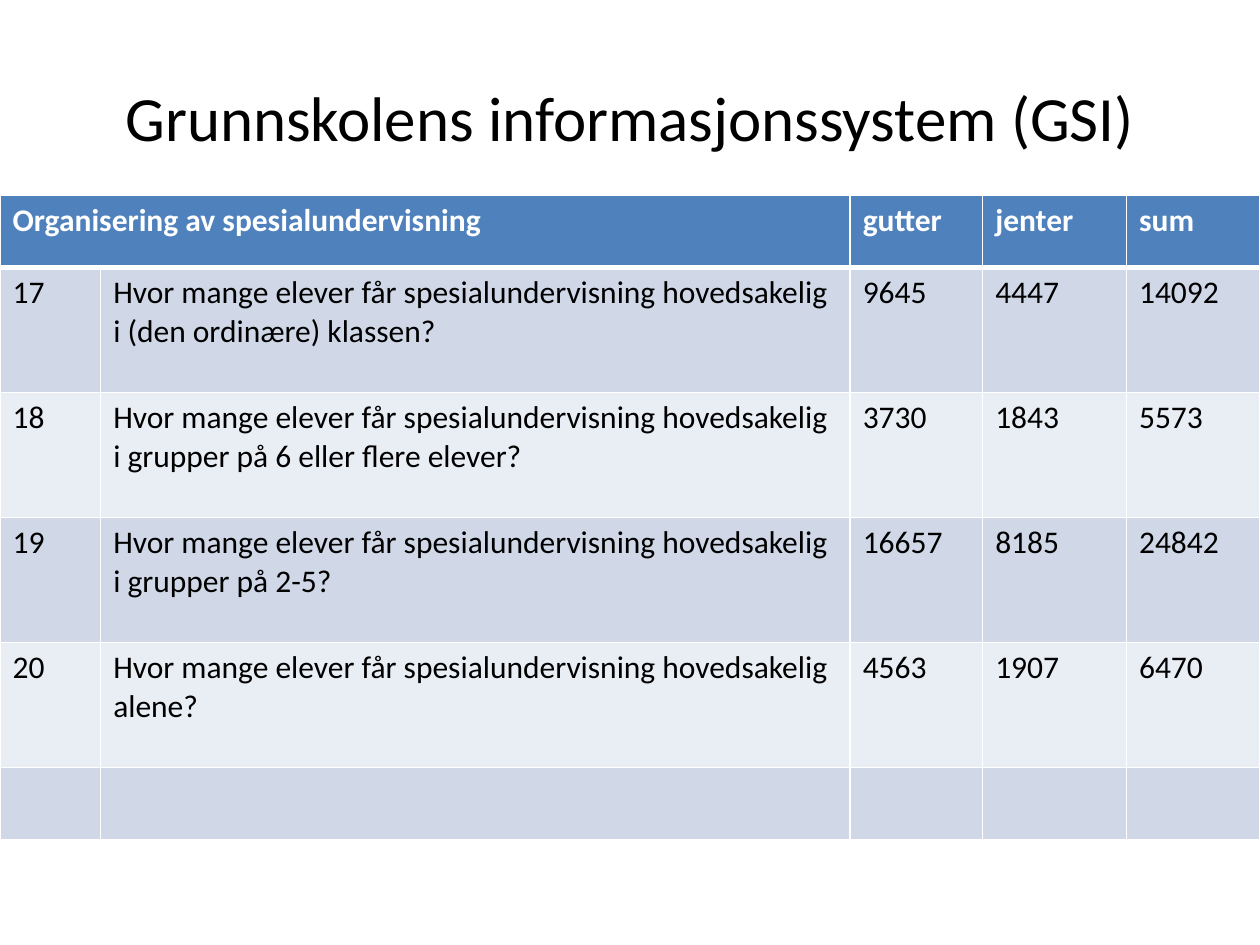
from dataclasses import dataclass

from lxml.etree import SubElement
from pptx import Presentation
from pptx.dml.color import RGBColor as Rgb
from pptx.enum.text import MSO_ANCHOR as Anchor, PP_ALIGN as Align
from pptx.oxml.ns import qn
from pptx.util import Cm, Pt


@dataclass(frozen=True)
class Theme:
    font: str = "Calibri"
    ink: str = "000000"
    white: str = "FFFFFF"
    head: str = "4F81BD"
    bands: tuple = ("D0D8E8", "E9EDF4")
    title: int = 36
    body: int = 18
    thin: int = 1
    thick: int = 3


THEME = Theme()
ASK = "Hvor mange elever får spesialundervisning hovedsakelig "
ROWS = [
    ("Organisering av spesialundervisning", "", "gutter", "jenter", "sum"),
    ("17", ASK + "i (den ordinære) klassen?", "9645", "4447", "14092"),
    ("18", ASK + "i grupper på 6 eller flere elever?", "3730", "1843", "5573"),
    ("19", ASK + "i grupper på 2-5?", "16657", "8185", "24842"),
    ("20", ASK + "alene?", "4563", "1907", "6470"),
    ("",) * 5,
]
WIDTHS = (2.03, 15.11, 2.67, 2.9, 2.69)
SHORT, TALL = 1.45, 2.52


def style(para, size, color, bold=False):
    font = para.font
    for item in [font] + [run.font for run in para.runs]:
        item.name, item.size, item.bold = THEME.font, Pt(size), bold
        item.color.rgb = Rgb.from_string(color)


def edge(cell, top, bottom):
    """Draw white borders on all four sides of a cell."""
    props = cell._tc.get_or_add_tcPr()
    sides = {"L": THEME.thin, "R": THEME.thin, "T": top, "B": bottom}
    for side, width in sides.items():
        line = SubElement(props, qn(f"a:ln{side}"), w=str(Pt(width)))
        fill = SubElement(line, qn("a:solidFill"))
        SubElement(fill, qn("a:srgbClr"), val=THEME.white)


def add_title(slide, box, text):
    frame = slide.shapes.add_textbox(*map(Cm, box)).text_frame
    frame.word_wrap = True
    frame.vertical_anchor = Anchor.MIDDLE
    frame.text = text
    para = frame.paragraphs[0]
    para.alignment = Align.CENTER
    style(para, THEME.title, THEME.ink)


def add_grid(slide, box, rows):
    table = slide.shapes.add_table(len(rows), len(WIDTHS), *map(Cm, box)).table
    for col, width in zip(table.columns, WIDTHS):
        col.width = Cm(width)
    for i, row in enumerate(rows):
        head = i == 0
        table.rows[i].height = Cm(TALL if row[0] and not head else SHORT)
        fill = THEME.head if head else THEME.bands[(i - 1) % 2]
        top = THEME.thick if i == 1 else THEME.thin
        bottom = THEME.thick if head else THEME.thin
        for j, text in enumerate(row):
            cell = table.cell(i, j)
            edge(cell, top, bottom)
            cell.fill.solid()
            cell.fill.fore_color.rgb = Rgb.from_string(fill)
            cell.text = text
            color = THEME.white if head else THEME.ink
            style(cell.text_frame.paragraphs[0], THEME.body, color, head)
    # The heading spans the number and question columns
    table.cell(0, 0).merge(table.cell(0, 1))


def main():
    deck = Presentation()
    deck.slide_width, deck.slide_height = Cm(25.4), Cm(19.05)
    slide = deck.slides.add_slide(deck.slide_layouts[6])
    # Title
    add_title(slide, (1.27, 0.76, 22.86, 3.18),
              "Grunnskolens informasjonssystem (GSI)")
    # Table of pupils by way of teaching
    add_grid(slide, (0, 3.94, sum(WIDTHS), 2 * SHORT + 4 * TALL), ROWS)
    deck.save("out.pptx")


if __name__ == "__main__":
    main()
